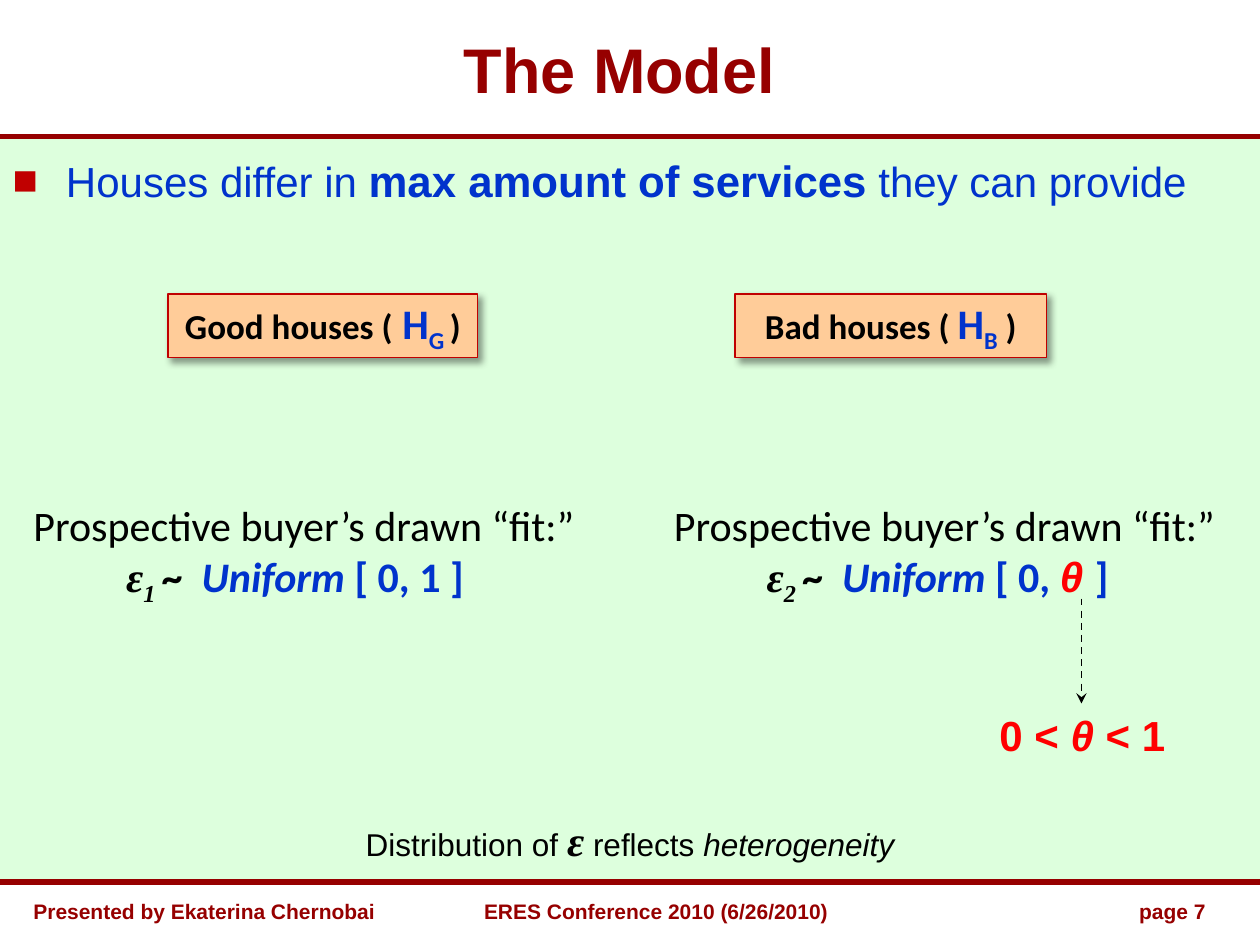
from lxml.etree import SubElement
from pptx import Presentation
from pptx.dml.color import RGBColor
from pptx.enum.dml import MSO_LINE
from pptx.enum.shapes import MSO_CONNECTOR, MSO_SHAPE
from pptx.enum.text import MSO_ANCHOR, MSO_AUTO_SIZE, PP_ALIGN
from pptx.oxml.ns import qn
from pptx.util import Pt

MAROON = RGBColor(0x96, 0, 0)
CRIMSON = RGBColor(0xC0, 0, 0)
RED = RGBColor(0xFF, 0, 0)
BLUE = RGBColor(0, 0x33, 0xCC)
BLACK = RGBColor(0, 0, 0)
MINT = RGBColor(0xDD, 0xFF, 0xDD)
PEACH = RGBColor(0xFF, 0xCC, 0x99)
LEFT, MID, RIGHT = PP_ALIGN.LEFT, PP_ALIGN.CENTER, PP_ALIGN.RIGHT
WIDE, HIGH, TOP, BASE = 720, 540, 78, 504


def style(name, size, ink, bold=False, italic=False, drop=None):
    font = dict(name=name, size=Pt(size), bold=bold, italic=italic)
    return font, ink, drop


HEAD = style("Arial", 36, MAROON, True)
FOOT = style("Arial", 12, MAROON, True)
LEAD = style("Arial", 24, BLUE)
KEY = style("Arial", 25, BLUE, True)
NOTE = style("Arial", 18, BLACK)
TERM = style("Arial", 18, BLACK, italic=True)
GREEK = style("Times New Roman", 24, BLACK, True, True)
INDEX = style("Times New Roman", 24, BLACK, True, True, -25000)
NAME = style("Calibri", 20, BLACK, True)
TYPE = style("Calibri", 24, BLUE, True)
SUB = style("Calibri", 24, BLUE, True, drop=-25000)
PLAIN = style("Calibri", 24, BLACK)
TILDE = style("Calibri", 24, BLACK, True)
LAW = style("Calibri", 24, BLUE, True, True)
BOUND = style("Arial", 24, RED, True)
THETA = style("Arial", 24, RED, True, True)

TITLE = [("The Model", HEAD)]
POINT = [("Houses differ in ", LEAD), ("max amount of services ", KEY),
         ("they can provide", LEAD)]
CLOSE = [("Distribution of ", NOTE), ("ε", GREEK), (" reflects ", NOTE),
         ("heterogeneity", TERM)]
HOUSES = [
    (96, 177, [("Good houses (", NAME), (" H", TYPE), ("G ", SUB), (")", NAME)]),
    (420, 178, [("Bad houses ( ", NAME), ("H", TYPE), ("B", SUB), (" )", NAME)]),
]
FITS = [
    (12, 342, "1 ", [(" [ 0, 1 ]", TYPE)]),
    (378, 336, "2 ", [(" [ 0, ", TYPE), ("θ ", THETA), ("]", TYPE)]),
]
RANGE = [("0 < ", BOUND), ("θ", THETA), (" < 1", BOUND)]
FOOTER = [
    (12, 228, LEFT, "Presented by Ekaterina Chernobai"),
    (231, 288, MID, "ERES Conference 2010 (6/26/2010)"),
    (564, 132, RIGHT, "page 7"),
]


def write(para, runs, align=LEFT):
    para.alignment = align
    for text, (font, ink, drop) in runs:
        run = para.add_run()
        run.text = text
        for key, value in font.items():
            setattr(run.font, key, value)
        run.font.color.rgb = ink
        if drop:
            run.font._element.set("baseline", str(drop))


def indent(para, left, first=0):
    props = para._p.get_or_add_pPr()
    props.set("marL", str(Pt(left)))
    props.set("indent", str(Pt(first)))
    return props


def place(shape, *box):
    for key, value in zip(("left", "top", "width", "height"), box):
        setattr(shape, key, Pt(value))


def label(slide, box, *lines, align=LEFT):
    frame = slide.shapes.add_textbox(*map(Pt, box)).text_frame
    frame.word_wrap = True
    for num, runs in enumerate(lines):
        para = frame.add_paragraph() if num else frame.paragraphs[0]
        write(para, runs, align)
    return frame


def block(slide, box, fill):
    shape = slide.shapes.add_shape(MSO_SHAPE.RECTANGLE, *map(Pt, box))
    shape.shadow.inherit = False
    shape.fill.solid()
    shape.fill.fore_color.rgb = fill
    return shape


def rule(slide, ends, ink, width):
    line = slide.shapes.add_connector(MSO_CONNECTOR.STRAIGHT, *map(Pt, ends))
    line.line.color.rgb = ink
    line.line.width = Pt(width)
    SubElement(line._element.spPr, qn("a:effectLst"))
    return line


def shade(shape):
    effects = shape._element.spPr.find(qn("a:effectLst"))
    cast = SubElement(effects, qn("a:outerShdw"), blurRad=str(Pt(4)),
                      dist=str(Pt(3)), dir="2700000", algn="tl", rotWithShape="0")
    ink = SubElement(cast, qn("a:srgbClr"), val=str(BLACK))
    SubElement(ink, qn("a:alpha"), val="40000")


def fill_body(body):
    place(body, 0, 84, WIDE, 411)
    frame = body.text_frame
    frame.auto_size = MSO_AUTO_SIZE.NONE
    first, last = frame.paragraphs[0], frame.add_paragraph()
    write(first, POINT)
    write(last, CLOSE, MID)
    first.space_before, last.space_before = Pt(2), Pt(348)
    props = indent(first, 30.5, -30.5)
    tint = SubElement(props, qn("a:buClr"))
    SubElement(tint, qn("a:srgbClr"), val=str(CRIMSON))
    SubElement(props, qn("a:buFont"), typeface="Arial")
    SubElement(props, qn("a:buChar"), char="■")
    SubElement(indent(last, 0), qn("a:buNone"))


def main():
    deck = Presentation()
    deck.slide_width, deck.slide_height = Pt(WIDE), Pt(HIGH)
    slide = deck.slides.add_slide(deck.slide_layouts[1])
    title, body = slide.placeholders

    panel = block(slide, (0, TOP, WIDE, BASE - TOP), MINT)
    panel.line.fill.background()
    title._element.addprevious(panel._element)
    for y in (TOP, BASE):
        rule(slide, (0, y, WIDE, y), MAROON, 3)

    place(title, 12, 12, 684, 54)
    title.text_frame.auto_size = MSO_AUTO_SIZE.NONE
    title.text_frame.vertical_anchor = MSO_ANCHOR.MIDDLE
    write(title.text_frame.paragraphs[0], TITLE, MID)
    fill_body(body)

    for left, width, runs in HOUSES:
        house = block(slide, (left, 168, width, 36.5), PEACH)
        house.line.color.rgb = CRIMSON
        house.line.width = Pt(0.75)
        shade(house)
        house.text_frame.word_wrap = False
        write(house.text_frame.paragraphs[0], runs, MID)

    for left, width, index, span in FITS:
        law = [("ε", GREEK), (index, INDEX), ("~  ", TILDE), ("Uniform", LAW)]
        frame = label(slide, (left, 282, width, 65),
                      [("Prospective buyer’s drawn “fit:”", PLAIN)], law + span)
        indent(frame.paragraphs[1], 53)

    arrow = rule(slide, (618, 342, 618, 402), BLACK, 1)
    arrow.line.dash_style = MSO_LINE.DASH
    SubElement(arrow.line._get_or_add_ln(), qn("a:tailEnd"), type="stealth")
    label(slide, (564, 402, 114, 36), RANGE)

    for left, width, align, text in FOOTER:
        label(slide, (left, 510, width, 20), [(text, FOOT)], align=align)

    deck.save("out.pptx")


if __name__ == "__main__":
    main()
